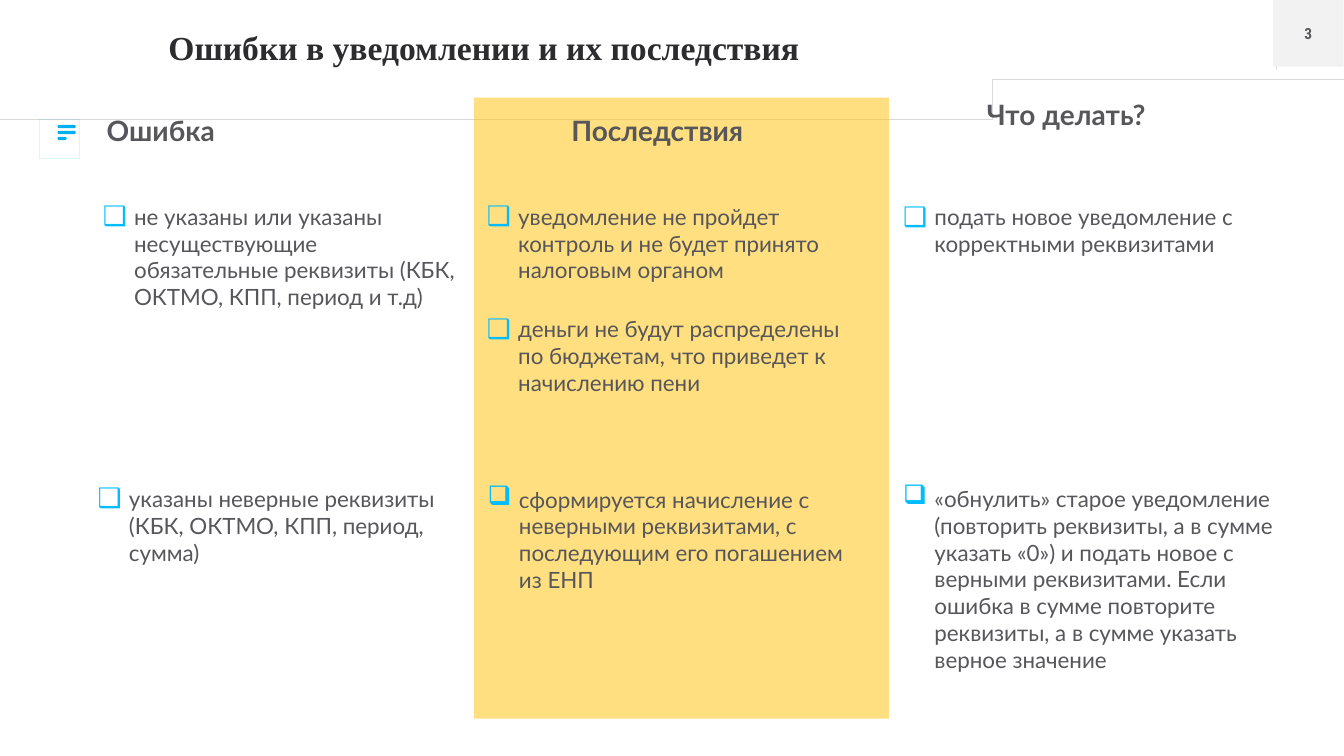
import dataclasses

import lxml.etree
import pptx
import pptx.dml.color
import pptx.enum.shapes
import pptx.enum.text
import pptx.oxml
import pptx.oxml.ns
import pptx.util
from pptx.util import Cm


@dataclasses.dataclass(frozen=True)
class Theme:
    title: str = "2C2B2D"
    text: str = "57565A"
    accent: str = "00B0F0"
    marker: str = "01BCFF"
    band: str = "FFC000"
    tab: str = "F2F2F2"
    rule: str = "D9D9D9"
    title_font: str = "Times New Roman"
    text_font: str = "Lato"
    number_font: str = "Roboto Condensed"
    title_size: int = 24
    heading_size: int = 20
    list_size: int = 16
    number_size: int = 11


THEME = Theme()
SHAPES = pptx.enum.shapes.MSO_SHAPE

HEADINGS = [
    ("Ошибка", (2.69, 2.87, 8.94, 0.86)),
    ("Последствия", (14.4, 2.87, 5.77, 1.55)),
    ("Что делать?", (24.87, 2.46, 6.2, 1.55)),
]

LISTS = [
    ((2.59, 5.11, 9.17, 2.74), [
        "не указаны или указаны несуществующие обязательные реквизиты "
        "(КБК, ОКТМО, КПП, период и т.д)",
    ]),
    ((12.27, 5.11, 9.6, 4.93), [
        "уведомление не пройдет контроль и не будет принято налоговым органом",
        "деньги не будут распределены по бюджетам, что приведет к начислению пени",
    ]),
    ((22.76, 5.13, 9.17, 1.37), [
        "подать новое уведомление с корректными реквизитами",
    ]),
    ((2.46, 12.22, 9.17, 2.06), [
        "указаны неверные реквизиты (КБК, ОКТМО, КПП, период, сумма)",
    ]),
    ((12.29, 12.24, 9.6, 2.74), [
        "сформируется начисление с неверными реквизитами, "
        "с последующим его погашением из ЕНП",
    ]),
    ((22.76, 12.22, 9.6, 4.78), [
        "«обнулить» старое уведомление (повторить реквизиты, а в сумме указать «0») "
        "и подать новое с верными реквизитами. Если ошибка в сумме повторите "
        "реквизиты, а в сумме указать верное значение",
    ]),
]

HEADER_RULE = [(33.87, 1.73), (26.09, 1.73), (25.12, 1.73, 25.5, 2.54, 24.46, 2.52), (0, 2.52)]
SHEET_EDGE = [
    (1.78, 2.69), (1.35, 2.69), (1.27, 2.69, 1.19, 2.77, 1.19, 2.84),
    (1.19, 3.78), (1.19, 3.86, 1.27, 3.94, 1.35, 3.94),
    (1.98, 3.94), (2.06, 3.94, 2.13, 3.86, 2.13, 3.78), (2.13, 3.05),
]
SHEET_INSIDE = [
    (1.78, 2.77), (1.78, 2.92), (1.78, 3, 1.83, 3.05, 1.91, 3.05),
    (2.06, 3.05), (2.06, 3.78), (2.06, 3.81, 2.01, 3.86, 1.98, 3.86),
    (1.35, 3.86), (1.32, 3.86, 1.27, 3.81, 1.27, 3.78),
    (1.27, 2.84), (1.27, 2.79, 1.32, 2.77, 1.35, 2.77),
]


def rgb(color):
    return pptx.dml.color.RGBColor.from_string(color)


def place(box, area):
    box.left, box.top, box.width, box.height = map(Cm, area)


def prepare_frame(box, inset=True):
    frame = box.text_frame
    frame.word_wrap = True
    frame.auto_size = pptx.enum.text.MSO_AUTO_SIZE.SHAPE_TO_FIT_TEXT
    frame.vertical_anchor = pptx.enum.text.MSO_ANCHOR.TOP
    if not inset:
        frame.margin_left = frame.margin_right = Cm(0)
        frame.margin_top = frame.margin_bottom = Cm(0)
    return frame


def add_span(para, text, font, size, color, bold=False):
    span = para.add_run()
    span.text = text
    span.font.name = font
    span.font.size = pptx.util.Pt(size)
    span.font.bold = bold
    span.font.color.rgb = rgb(color)


def add_marker(para):
    properties = para._p.get_or_add_pPr()
    properties.set("marL", str(Cm(0.79)))
    properties.set("indent", str(Cm(-0.79)))
    color = lxml.etree.SubElement(properties, pptx.oxml.ns.qn("a:buClr"))
    lxml.etree.SubElement(color, pptx.oxml.ns.qn("a:srgbClr"), val=THEME.marker)
    lxml.etree.SubElement(properties, pptx.oxml.ns.qn("a:buSzPct"), val="120000")
    lxml.etree.SubElement(properties, pptx.oxml.ns.qn("a:buChar"), char="❑")


def trace(steps):
    points = [steps[0]]
    for step in steps[1:]:
        if len(step) == 2:
            points.append(step)
            continue
        curve = [points[-1], step[:2], step[2:4], step[4:]]
        for part in range(1, 13):
            t = part / 12
            weights = ((1 - t) ** 3, 3 * t * (1 - t) ** 2, 3 * t * t * (1 - t), t ** 3)
            points.append(tuple(
                sum(w * node[axis] for w, node in zip(weights, curve)) for axis in (0, 1)
            ))
    return points


def add_outline(shapes, contours, close):
    first, *others = [trace(steps) for steps in contours]
    builder = shapes.build_freeform(*first[0], scale=Cm(1))
    builder.add_line_segments(first[1:], close=close)
    for points in others:
        builder.move_to(*points[0])
        builder.add_line_segments(points[1:], close=close)
    outline = builder.convert_to_shape()
    outline.shadow.inherit = False
    return outline


def add_block(shapes, kind, area, color):
    block = shapes.add_shape(kind, *map(Cm, area))
    block.shadow.inherit = False
    block.fill.solid()
    block.fill.fore_color.rgb = rgb(color)
    block.line.fill.background()
    return block


def add_header(page):
    edge = page.shapes.add_connector(
        pptx.enum.shapes.MSO_CONNECTOR.STRAIGHT, Cm(32.16), Cm(0), Cm(32.16), Cm(1.73)
    )
    lxml.etree.SubElement(edge.element.spPr, pptx.oxml.ns.qn("a:effectLst"))
    rule = add_outline(page.shapes, [HEADER_RULE], close=False)
    rule.fill.background()
    for item in (edge, rule):
        item.line.color.rgb = rgb(THEME.rule)
        item.line.width = pptx.util.Pt(0.5)
    tab = add_block(page.shapes, SHAPES.RECTANGLE, (32.08, 0, 1.78, 1.68), THEME.tab)
    frame = prepare_frame(tab, inset=False)
    frame.auto_size = pptx.enum.text.MSO_AUTO_SIZE.NONE
    frame.vertical_anchor = pptx.enum.text.MSO_ANCHOR.MIDDLE
    para = frame.paragraphs[0]
    para.alignment = pptx.enum.text.PP_ALIGN.CENTER
    add_span(para, "3", THEME.number_font, THEME.number_size, THEME.text, bold=True)


def add_band(page):
    band = add_block(page.shapes, SHAPES.RECTANGLE, (11.94, 2.46, 10.46, 15.65), THEME.band)
    color = band.element.spPr.find(".//" + pptx.oxml.ns.qn("a:srgbClr"))
    lxml.etree.SubElement(color, pptx.oxml.ns.qn("a:alpha"), val="50000")


def add_sheet_icon(page):
    icon = page.shapes.add_group_shape()
    sheet = add_outline(icon.shapes, [SHEET_EDGE, SHEET_INSIDE], close=True)
    sheet.fill.solid()
    sheet.fill.fore_color.rgb = rgb(THEME.accent)
    sheet.line.fill.background()
    for row, width in enumerate((0.46, 0.46, 0.23)):
        area = (1.45, 3.15 + 0.15 * row, width, 0.08)
        bar = add_block(icon.shapes, SHAPES.ROUNDED_RECTANGLE, area, THEME.accent)
        bar.adjustments[0] = 0.5


def add_heading(page, text, area):
    box = page.shapes.add_textbox(*map(Cm, area))
    para = prepare_frame(box, inset=False).paragraphs[0]
    para.space_after = pptx.util.Pt(4.9)
    add_span(para, text, THEME.text_font, THEME.heading_size, THEME.text, bold=True)


def fill_list(box, area, items):
    place(box, area)
    frame = prepare_frame(box, inset=False)
    for index, text in enumerate(items):
        para = frame.add_paragraph() if index else frame.paragraphs[0]
        add_marker(para)
        para.space_before = pptx.util.Pt(23 if index else 0)
        para.alignment = pptx.enum.text.PP_ALIGN.LEFT
        add_span(para, text, THEME.text_font, THEME.list_size, THEME.text)


def fill_title(box, text):
    place(box, (3.99, 0.56, 26.19, 1.27))
    para = prepare_frame(box).paragraphs[0]
    para.alignment = pptx.enum.text.PP_ALIGN.LEFT
    para.space_after = pptx.util.Pt(6)
    add_span(para, text, THEME.title_font, THEME.title_size, THEME.title, bold=True)


def main():
    deck = pptx.Presentation()
    deck.slide_width, deck.slide_height = Cm(33.87), Cm(19.05)
    page = deck.slides.add_slide(deck.slide_layouts.get_by_name("Comparison"))
    title, *bodies = list(page.placeholders)
    add_header(page)
    add_band(page)
    add_sheet_icon(page)
    for text, area in HEADINGS:
        add_heading(page, text, area)
    for area, items in LISTS:
        box = bodies.pop(0) if bodies else page.shapes.add_textbox(*map(Cm, area))
        box.element.getparent().append(box.element)
        fill_list(box, area, items)
    title.element.getparent().append(title.element)
    fill_title(title, "Ошибки в уведомлении и их последствия")
    deck.save("out.pptx")


if __name__ == "__main__":
    main()
